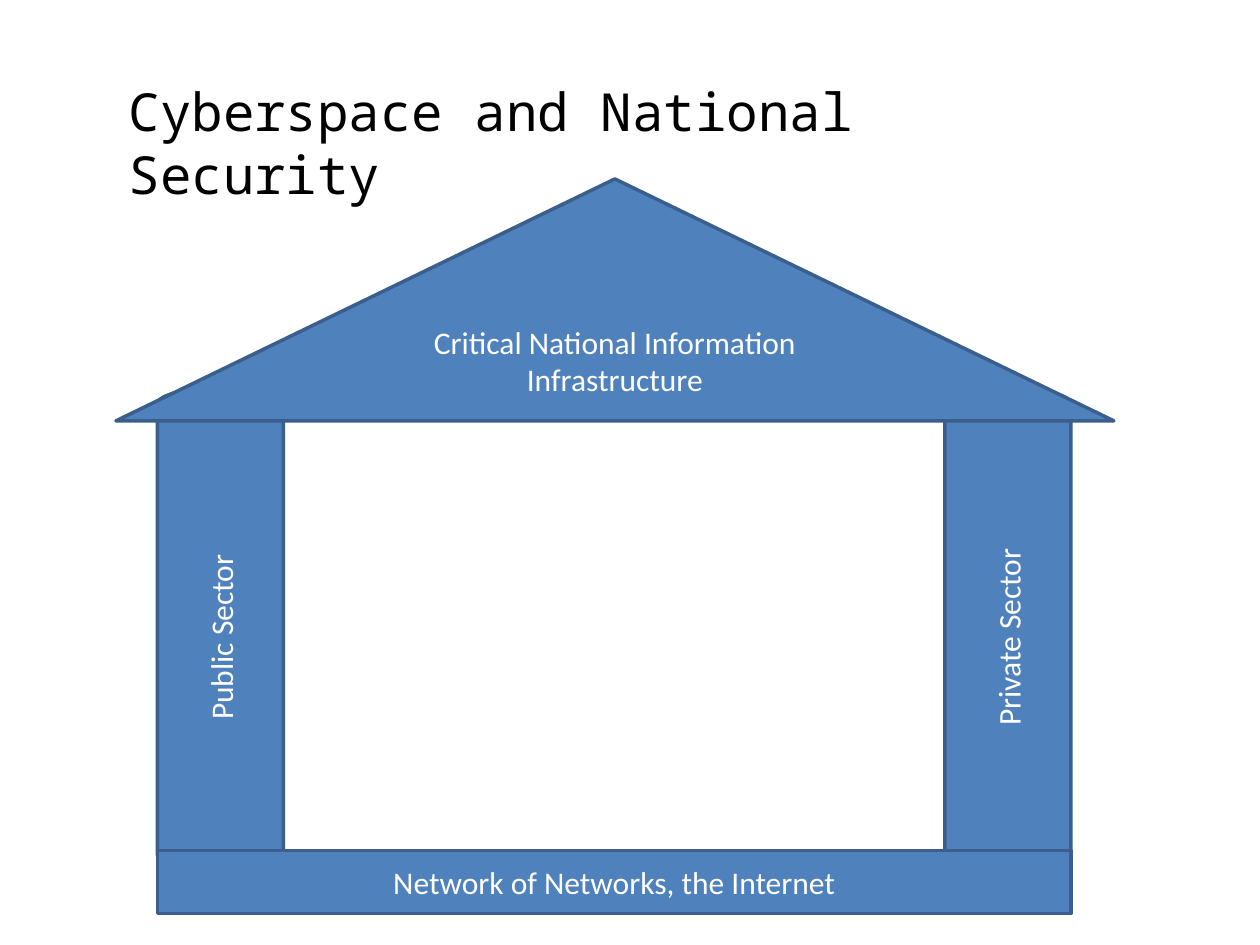
"""Build a slide that shows cyberspace and national security as a house."""
import pptx
import pptx.dml.color
import pptx.enum.shapes
import pptx.enum.text
import pptx.util

Inches = pptx.util.Inches
RGBColor = pptx.dml.color.RGBColor
Kind = pptx.enum.shapes.MSO_SHAPE
Align = pptx.enum.text.PP_ALIGN
Anchor = pptx.enum.text.MSO_ANCHOR

BLUE = RGBColor(0x4F, 0x81, 0xBD)
EDGE = RGBColor(0x3A, 0x5F, 0x8C)
WHITE = RGBColor(0xFF, 0xFF, 0xFF)
BLACK = RGBColor(0x00, 0x00, 0x00)


def write(frame, text, font="Calibri", size=18, color=WHITE,
          align=Align.CENTER, anchor=Anchor.MIDDLE, turn=None):
    frame.word_wrap = True
    frame.auto_size = pptx.enum.text.MSO_AUTO_SIZE.NONE
    frame.vertical_anchor = anchor
    if turn:
        frame._txBody.bodyPr.set("vert", turn)
    para = frame.paragraphs[0]
    para.alignment = align
    run = para.add_run()
    run.text = text
    run.font.name = font
    run.font.size = pptx.util.Pt(size)
    run.font.color.rgb = color


class House:
    def __init__(self, slide, fill=BLUE, line=EDGE, width=2):
        self.slide = slide
        self.fill = fill
        self.line = line
        self.width = width

    def title(self, text, left, top, width, height):
        box = self.slide.shapes.title
        box.left, box.top = Inches(left), Inches(top)
        box.width, box.height = Inches(width), Inches(height)
        write(box.text_frame, text, font="Noto Sans Mono", size=30,
              color=BLACK, align=Align.LEFT, anchor=Anchor.TOP)

    def block(self, kind, text, left, top, width, height, **style):
        shape = self.slide.shapes.add_shape(
            kind, Inches(left), Inches(top), Inches(width), Inches(height))
        shape.shadow.inherit = False
        shape.fill.solid()
        shape.fill.fore_color.rgb = self.fill
        shape.line.color.rgb = self.line
        shape.line.width = pptx.util.Pt(self.width)
        write(shape.text_frame, text, **style)

    def pillar(self, text, left):
        self.block(Kind.CAN, text, left, 3.08, 1, 3.83, turn="vert270")


def main():
    deck = pptx.Presentation()
    deck.slide_width, deck.slide_height = Inches(10), Inches(7.5)
    house = House(deck.slides.add_slide(deck.slide_layouts[5]))

    left, span = 1.25, 7.25
    house.title("Cyberspace and National Security", 0.92, 0.58, 7.61, 0.61)
    house.pillar("Public Sector", left)
    house.pillar("Private Sector", left + span - 1)
    house.block(Kind.RECTANGLE, "Network of Networks, the Internet",
                left, 6.75, span, 0.5)
    house.block(Kind.ISOSCELES_TRIANGLE,
                "Critical National Information Infrastructure",
                0.92, 1.42, 7.92, 1.92)
    deck.save("out.pptx")


if __name__ == "__main__":
    main()
